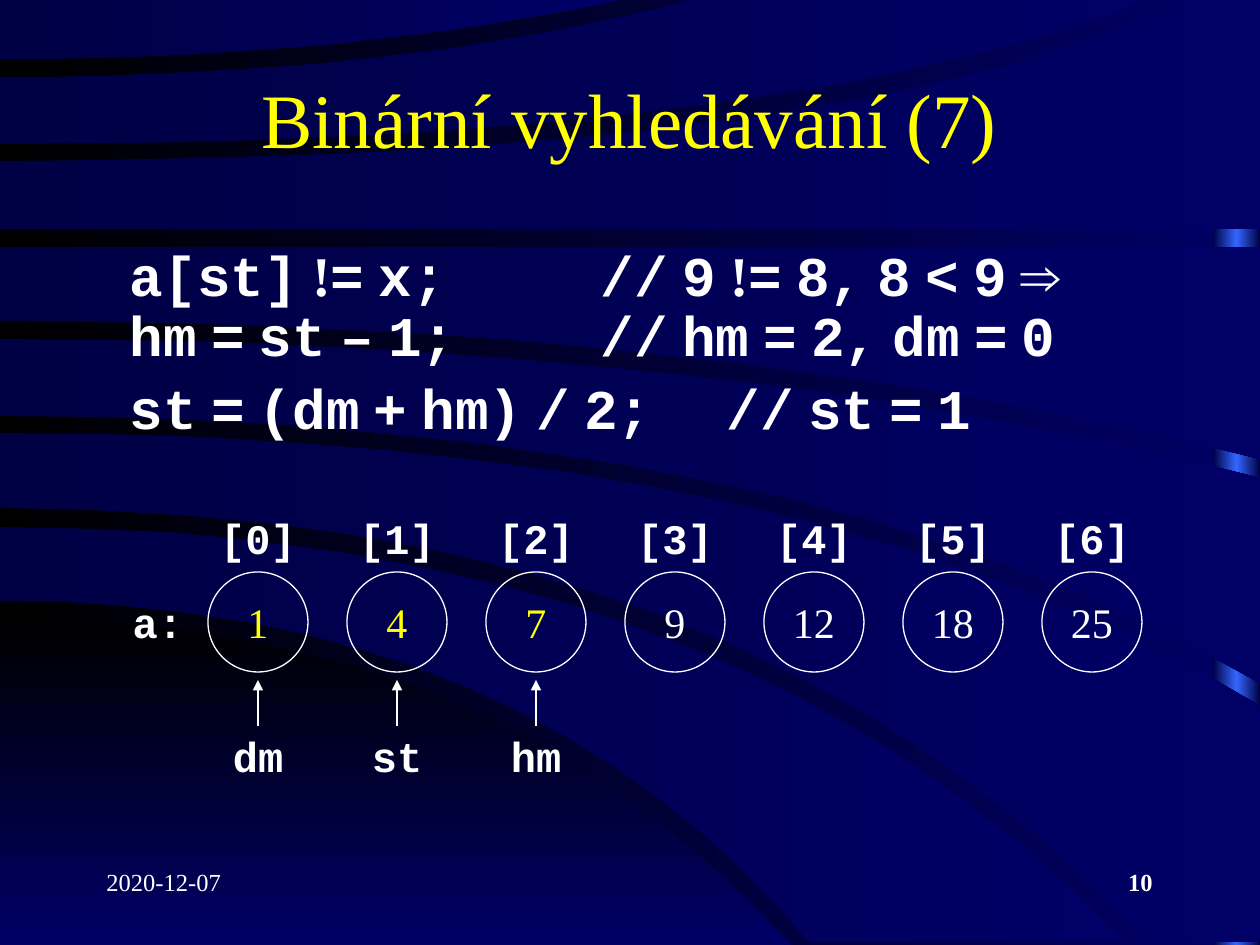
from copy import deepcopy
from dataclasses import dataclass
from itertools import groupby

from lxml.etree import SubElement
from pptx import Presentation
from pptx.dml.color import RGBColor as RGB
from pptx.enum.shapes import MSO_CONNECTOR as CONNECTOR, MSO_SHAPE as SHAPE
from pptx.enum.text import MSO_ANCHOR as ANCHOR, PP_ALIGN as ALIGN
from pptx.oxml.ns import qn
from pptx.util import Pt

PX = 914400 / 126


@dataclass(frozen=True)
class Theme:
    white: RGB = RGB(0xFF, 0xFF, 0xFF)
    yellow: RGB = RGB(0xFF, 0xFF, 0x00)
    black: RGB = RGB(0x00, 0x00, 0x00)
    navy: RGB = RGB(0x00, 0x00, 0x66)
    dark: RGB = RGB(0x00, 0x00, 0x44)
    glow: RGB = RGB(0x33, 0x66, 0xFF)
    serif: str = "Times New Roman"
    mono: str = "Courier New"
    title: int = 44
    code: int = 32
    label: int = 24
    footer: int = 14
    line: float = 0.75


theme = Theme()


def paint_gradient(fill, colors, angle=0):
    fill.gradient()
    fill.gradient_angle = angle
    for stop, color, position in zip(fill.gradient_stops, colors, (0, 1)):
        stop.color.rgb = color
        stop.position = position


def write(shape, text, size, font=theme.serif, color=theme.white, bold=False,
          align=ALIGN.CENTER, anchor=ANCHOR.MIDDLE):
    frame = shape.text_frame
    frame.word_wrap = True
    frame.vertical_anchor = anchor
    paragraph = frame.paragraphs[0]
    paragraph.alignment = align
    run = paragraph.add_run()
    run.text = text
    run.font.size = Pt(size)
    run.font.name = font
    run.font.bold = bold
    run.font.color.rgb = color


presentation = Presentation()
presentation.slide_width = round(1260 * PX)
presentation.slide_height = round(945 * PX)
slide = presentation.slides.add_slide(presentation.slide_layouts[6])
shapes = slide.shapes
paint_gradient(slide.background.fill, (theme.black, theme.navy))

stripe = shapes.add_shape(SHAPE.RECTANGLE, *(round(n * PX) for n in (1213, 0, 47, 945)))
stripe.shadow.inherit = False
stripe.line.fill.background()
paint_gradient(stripe.fill, (theme.dark, theme.dark))
first_stop = stripe._element.spPr.find(".//" + qn("a:gs"))
first_stop.addnext(deepcopy(first_stop))
middle_stop = stripe.fill.gradient_stops[1]
middle_stop.position = 0.5
middle_stop.color.rgb = theme.glow

swooshes = [
    ((619, 502, 791, 945), (945, 400, 791, 945)),
    ((527, 730, 1125, 942), (601, 525, 809, 942)),
    ((433, 815, 1260, 706), (508, 755, 1145, 942)),
    ((339, 715, 1260, 478), (416, 805, 1260, 683)),
    ((247, 630, 1260, 247), (321, 715, 1260, 459)),
    ((161, 870, 1188, -3), (229, 630, 1260, 229)),
    ((77, 412, 701, -3), (144, 790, 1155, -3)),
    ((-3, 315, 631, -3), (59, 353, 631, -3)),
]
steps = 16
for index, edges in enumerate(swooshes):
    curves = []
    for start_y, bend_x, end_x, end_y in edges:
        times = [step / steps for step in range(steps + 1)]
        curves.append([
            (round(2 * t * (1 - t) * bend_x + t * t * end_x),
             round(start_y + t * t * (end_y - start_y)))
            for t in times
        ])
    upper, lower = curves
    (upper_x, upper_y), (lower_x, lower_y) = upper[-1], lower[-1]
    corner = (max(upper_x, lower_x), lower_y if upper_x > lower_x else upper_y)
    points = upper + [corner] + lower[::-1]
    builder = shapes.build_freeform(*points[0], scale=PX)
    builder.add_line_segments(points[1:], close=True)
    swoosh = builder.convert_to_shape()
    swoosh.shadow.inherit = False
    swoosh.line.fill.background()
    if index == 0:
        paint_gradient(swoosh.fill, (theme.black, theme.navy), 270)
    else:
        paint_gradient(swoosh.fill, (theme.dark, theme.navy))

mono_label = dict(size=theme.label, font=theme.mono, bold=True)
texts = [
    ((94, 861, 262, 63), "2020-12-07",
     dict(size=theme.footer, align=ALIGN.LEFT, anchor=ANCHOR.TOP)),
    ((903, 861, 262, 63), "10",
     dict(size=theme.footer, bold=True, align=ALIGN.RIGHT, anchor=ANCHOR.TOP)),
    ((94, 60, 1071, 116), "Binární vyhledávání (7)",
     dict(size=theme.title, color=theme.yellow)),
    ((113, 572, 90, 100), "a:", mono_label),
]

values = [1, 4, 7, 9, 12, 18, 25]
markers = ["dm", "st", "hm"]
pitch = 139
for index, value in enumerate(values):
    left = 208 + index * pitch
    circle = shapes.add_shape(SHAPE.OVAL, *(round(n * PX) for n in (left, 572, 100, 100)))
    circle.shadow.inherit = False
    circle.fill.background()
    circle.line.color.rgb = theme.white
    circle.line.width = Pt(theme.line)
    active = index < len(markers)
    write(circle, str(value), theme.label, color=theme.yellow if active else theme.white)
    texts.append(((left - 5, 488, 110, 100), f"[{index}]", mono_label))

for index, marker in enumerate(markers):
    center = 258 + index * pitch
    texts.append(((center - 55, 706, 110, 100), marker, mono_label))
    arrow = shapes.add_connector(
        CONNECTOR.STRAIGHT, *(round(n * PX) for n in (center, 726, center, 680)))
    arrow.line.color.rgb = theme.white
    arrow.line.width = Pt(theme.line)
    SubElement(arrow.line._get_or_add_ln(), qn("a:tailEnd"), type="triangle")
    SubElement(arrow._element.spPr, qn("a:effectLst"))

for box, text, style in texts:
    write(shapes.add_textbox(*(round(n * PX) for n in box)), text, **style)

code = [
    "a[st] != x;\t// 9 != 8, 8 < 9 ⇒\vhm = st – 1;\t// hm = 2, dm = 0",
    "st = (dm + hm) / 2;\t// st = 1",
]
code_box = shapes.add_textbox(*(round(n * PX) for n in (84, 234, 1103, 208)))
frame = code_box.text_frame
frame.word_wrap = True
frame.margin_left = round(46 * PX)
frame.margin_top = round(14 * PX)
for index, text in enumerate(code):
    paragraph = frame.paragraphs[0] if index == 0 else frame.add_paragraph()
    paragraph.line_spacing = 0.9
    if index:
        paragraph.space_before = Pt(7)
    tabs = SubElement(paragraph._p.get_or_add_pPr(), qn("a:tabLst"))
    for position in (471, 597):
        SubElement(tabs, qn("a:tab"), pos=str(round(position * PX)), algn="l")
    for line_index, line in enumerate(text.split("\v")):
        if line_index:
            paragraph.add_line_break()
        for is_serif, characters in groupby(line, lambda letter: letter in " !⇒"):
            run = paragraph.add_run()
            run.text = "".join(characters)
            run.font.size = Pt(theme.code)
            run.font.name = theme.serif if is_serif else theme.mono
            run.font.bold = "⇒" not in run.text
            run.font.color.rgb = theme.white

presentation.save("out.pptx")
